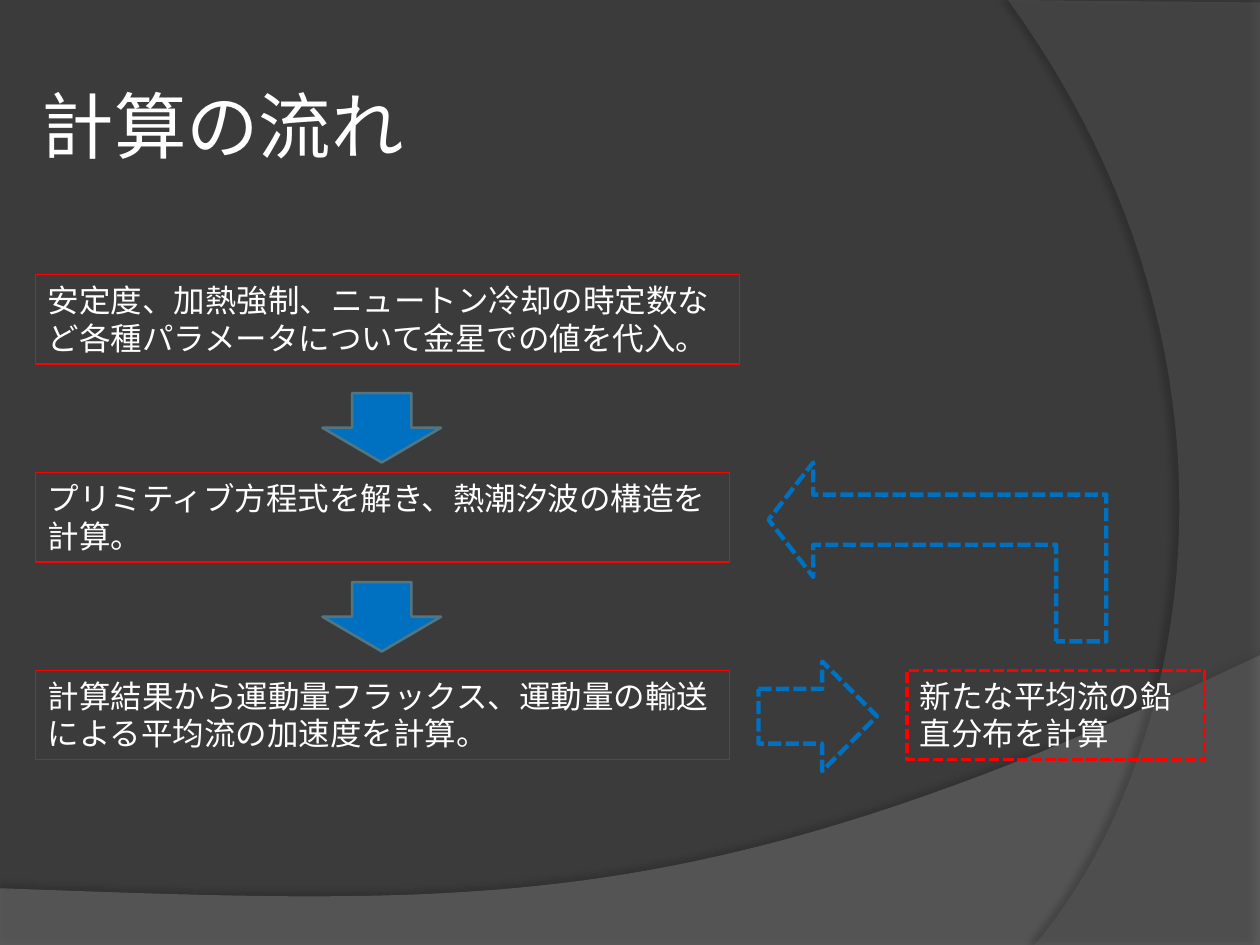
from lxml.etree import SubElement
from pptx import Presentation
from pptx.dml.color import RGBColor
from pptx.enum.dml import MSO_LINE as Dash
from pptx.enum.shapes import MSO_SHAPE as Shape
from pptx.enum.text import MSO_ANCHOR as Anchor, MSO_AUTO_SIZE as AutoSize, PP_ALIGN as Align
from pptx.oxml.ns import qn
from pptx.util import Inches, Pt

BACKGROUND, WHITE, RED, BLUE, TEAL = "3B3B3B", "FFFFFF", "FF0000", "0070C0", "517682"


def color(value):
    return RGBColor.from_string(value)


def curve(start, first, second, end, steps=48):
    points = []
    for step in range(steps + 1):
        t = step / steps
        weights = ((1 - t) ** 3, 3 * t * (1 - t) ** 2, 3 * t * t * (1 - t), t ** 3)
        points.append(tuple(sum(weight * point[axis] for weight, point
                                in zip(weights, (start, first, second, end)))
                            for axis in (0, 1)))
    return points


class FlowSlide:
    """Holds the slide style and draws each kind of element."""

    font, size = "Arial", 18

    def __init__(self, deck):
        self.page = deck.slides.add_slide(deck.slide_layouts[6])
        fill = self.page.background.fill
        fill.solid()
        fill.fore_color.rgb = color(BACKGROUND)

    def label(self, box, text, font, size):
        frame = box.text_frame
        frame.word_wrap = True
        para = frame.paragraphs[0]
        para.text = text
        para.alignment = Align.LEFT
        para.font.name, para.font.size = font, Pt(size)
        para.font.color.rgb = color(WHITE)
        return frame

    def title(self, text, left, top, width, height):
        box = self.page.shapes.add_textbox(*map(Inches, (left, top, width, height)))
        frame = self.label(box, text, "Karla", 41.4)
        frame.vertical_anchor = Anchor.MIDDLE
        frame.margin_left = frame.margin_right = Inches(0.05)

    def shape(self, kind, place, line, weight, fill=None, dashed=False):
        shape = self.page.shapes.add_shape(kind, *map(Inches, place))
        shape.shadow.inherit = False
        if fill:
            shape.fill.solid()
            shape.fill.fore_color.rgb = color(fill)
        else:
            shape.fill.background()
        shape.line.color.rgb = color(line)
        shape.line.width = Pt(weight)
        if dashed:
            shape.line.dash_style = Dash.SQUARE_DOT
        return shape

    def step(self, text, left, top, width, weight=0.75, dashed=False):
        box = self.shape(Shape.RECTANGLE, (left, top, width, 0.71), RED, weight, dashed=dashed)
        frame = self.label(box, text, self.font, self.size)
        frame.vertical_anchor = Anchor.TOP
        frame.auto_size = AutoSize.SHAPE_TO_FIT_TEXT

    def wave(self, points, fill, opacity, shade, distance, direction):
        corners = [(Inches(x), Inches(y)) for x, y in points]
        builder = self.page.shapes.build_freeform(*corners[0], scale=1.0)
        builder.add_line_segments(corners[1:], close=True)
        shape = builder.convert_to_shape()
        shape.fill.solid()
        shape.fill.fore_color.rgb = color(fill)
        shape.line.fill.background()
        shape.shadow.inherit = False
        props = shape.element.spPr
        tint = props.find(qn("a:solidFill")).find(qn("a:srgbClr"))
        SubElement(tint, qn("a:alpha"), val=str(opacity * 1000))
        shadow = SubElement(props.find(qn("a:effectLst")), qn("a:outerShdw"),
                            blurRad=str(Pt(4)), dist=str(Pt(distance)),
                            dir=str(direction * 60000), algn="ctr", rotWithShape="0")
        dark = SubElement(shadow, qn("a:srgbClr"), val="000000")
        SubElement(dark, qn("a:alpha"), val=str(shade * 1000))


def main():
    deck = Presentation()
    deck.slide_width, deck.slide_height = Inches(10), Inches(7.5)
    slide = FlowSlide(deck)

    bottom = curve((10, 5.2), (5.59, 7.29), (3.91, 7.19), (0, 7.05))
    slide.wave([(0, 7.51), (10, 7.51)] + bottom, "7F7F7F", 45, 35, 3.5, 270)
    side = curve((8.21, 7.5), (9.35, 6.19), (10.18, 3), (8, 0))
    slide.wave([(10, 0.02), (10, 7.5)] + side, "5E5E5E", 40, 45, 4, 180)

    slide.title("計算の流れ", 0.28, 0.6, 7.49, 0.77)
    steps = (
        ("安定度、加熱強制、ニュートン冷却の時定数など各種パラメータについて金星での値を代入。", 5.59),
        ("プリミティブ方程式を解き、熱潮汐波の構造を計算。", 5.51),
        ("計算結果から運動量フラックス、運動量の輸送による平均流の加速度を計算。", 5.51),
    )
    for index, (text, width) in enumerate(steps):
        slide.step(text, 0.28, 2.18 + 1.57 * index, width)
    for top in (3.12, 4.62):
        slide.shape(Shape.DOWN_ARROW, (2.56, top, 0.94, 0.55), TEAL, 1.5, fill=BLUE)

    slide.shape(Shape.RIGHT_ARROW, (6.02, 5.25, 0.94, 0.87), BLUE, 2.5, dashed=True)
    slide.step("新たな平均流の鉛直分布を計算", 7.2, 5.32, 2.36, 2, dashed=True)
    feedback = slide.shape(Shape.BENT_UP_ARROW, (6.73, 3.04, 1.42, 2.68), BLUE, 2.5, dashed=True)
    feedback.rotation = 270
    for index, value in enumerate((0.28, 0.32, 0.25)):
        feedback.adjustments[index] = value

    deck.save("out.pptx")


if __name__ == "__main__":
    main()
